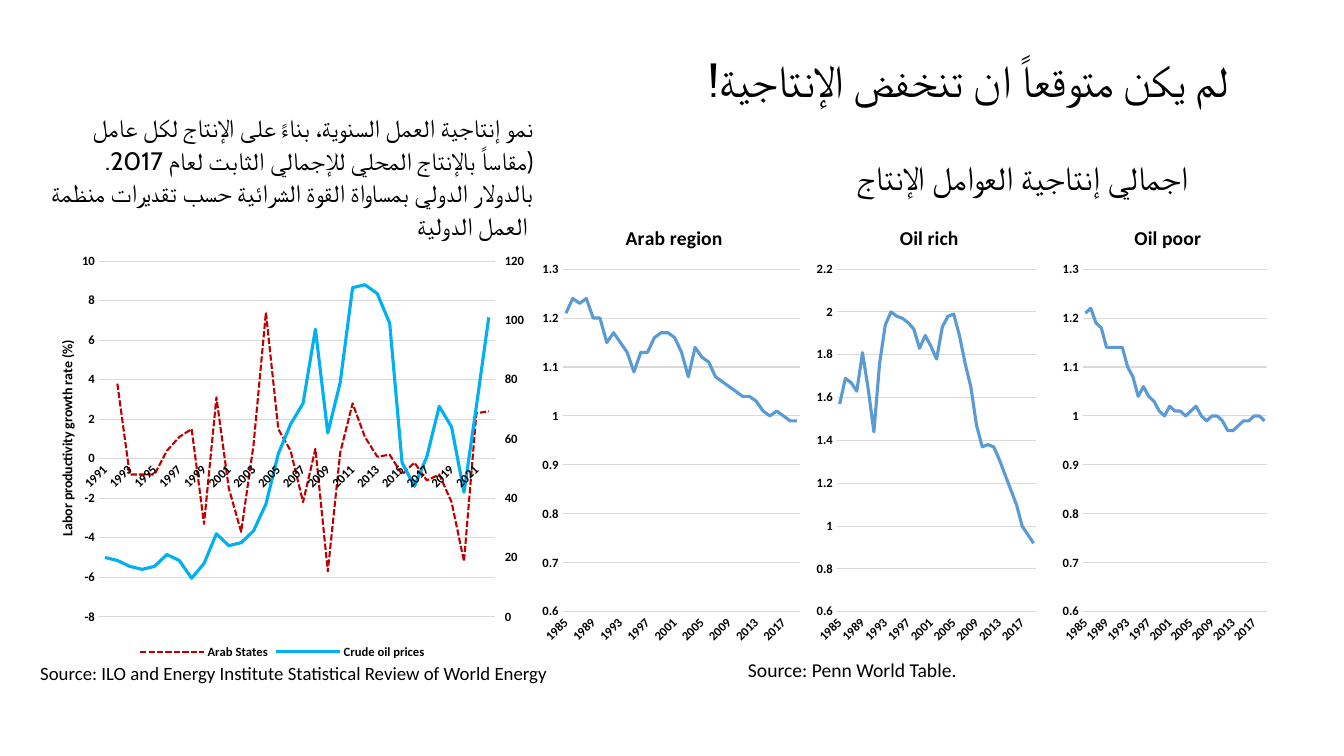
"""Build the slide on falling productivity in the Arab region."""
import copy

import pptx
import pptx.chart.data
import pptx.dml.color
import pptx.enum.chart
import pptx.enum.dml
import pptx.enum.text
import pptx.oxml
import pptx.oxml.ns
import pptx.util

Inches, Pt, qn = pptx.util.Inches, pptx.util.Pt, pptx.oxml.ns.qn
RGB = pptx.dml.color.RGBColor.from_string
ALIGN, ANCHOR = pptx.enum.text.PP_ALIGN, pptx.enum.text.MSO_ANCHOR
COLORS = {"text": "000000", "grid": "D9D9D9", "states": "C00000", "oil": "00B0F0", "tfp": "5B9BD5"}

prs = pptx.Presentation()
prs.slide_width, prs.slide_height = Inches(13.33), Inches(7.5)
s = prs.slides.add_slide(prs.slide_layouts[6])


def set_layout(parent, index, **fractions):
    """Place a chart part by fractions of the chart area."""
    for old in parent.findall(qn("c:layout")):
        parent.remove(old)
    layout = pptx.oxml.parse_xml(f'<c:layout {pptx.oxml.ns.nsdecls("c")}><c:manualLayout/></c:layout>')
    manual = layout[0]
    items = [("xMode", "edge"), ("yMode", "edge")] + [(k, f"{v:.4f}") for k, v in fractions.items()]
    if "w" in fractions:
        items.insert(0, ("layoutTarget", "inner"))
    for tag, val in items:
        manual.makeelement(qn("c:" + tag))
        pptx.oxml.ns.qn("c:" + tag)
        child = copy.deepcopy(manual)
        child.tag = qn("c:" + tag)
        for sub in list(child):
            child.remove(sub)
        child.set("val", val)
        manual.append(child)
    parent.insert(index, layout)


def add_line_chart(box, cats, series, scale, label_step, plot):
    """Add a line chart with the shared axis style; plot is in inches."""
    data = pptx.chart.data.CategoryChartData()
    data.categories = cats
    for name, vals, color, width in series:
        data.add_series(name, vals)
    kind = pptx.enum.chart.XL_CHART_TYPE.LINE
    chart = s.shapes.add_chart(kind, *map(Inches, box), data).chart
    chart.has_title = chart.has_legend = False
    chart.font.name, chart.font.size, chart.font.bold = "Calibri", Pt(10), True
    chart.font.color.rgb = RGB(COLORS["text"])
    chart.plots[0].vary_by_categories = False
    for ser, (name, vals, color, width) in zip(chart.plots[0].series, series):
        ser.smooth = False
        ser.format.line.color.rgb = RGB(COLORS[color])
        ser.format.line.width = Pt(width)

    cat_ax, val_ax = chart.category_axis, chart.value_axis
    for ax in (cat_ax, val_ax):
        ax.major_tick_mark = ax.minor_tick_mark = pptx.enum.chart.XL_TICK_MARK.NONE
        font = ax.tick_labels.font
        font.name, font.size, font.bold = "Calibri", Pt(9), True
        font.color.rgb = RGB(COLORS["text"])
    val_ax.minimum_scale, val_ax.maximum_scale, val_ax.major_unit = scale
    val_ax.has_major_gridlines = True
    val_ax.format.line.fill.background()
    val_ax.tick_labels.number_format = "General"
    val_ax.tick_labels.number_format_is_linked = False
    for line in (cat_ax.format.line, val_ax.major_gridlines.format.line):
        line.color.rgb = RGB(COLORS["grid"])
        line.width = Pt(0.75)

    area = chart._chartSpace.find(".//" + qn("c:plotArea"))
    cat_el, val_el = area.find(qn("c:catAx")), area.find(qn("c:valAx"))
    cat_el.find(qn("c:txPr")).find(qn("a:bodyPr")).set("rot", "-2700000")
    skip = pptx.oxml.parse_xml(
        f'<c:tickLblSkip {pptx.oxml.ns.nsdecls("c")} val="{label_step}"/>')
    cat_el.find(qn("c:noMultiLvlLbl")).addprevious(skip)
    if val_el.find(qn("c:crossBetween")) is None:
        between = pptx.oxml.parse_xml(f'<c:crossBetween {pptx.oxml.ns.nsdecls("c")} val="between"/>')
        val_el.find(qn("c:crosses")).addnext(between)
    x, y, w, h = plot
    set_layout(area, 0, x=x / box[2], y=y / box[3], w=w / box[2], h=h / box[3])
    return chart


texts = [
    ((0.12, 0.39, 12.29, 0.79), "لم يكن متوقعاً ان تنخفض الإنتاجية!\u00a0".replace("\u00a0", " "),
     32, "Cabin", ALIGN.RIGHT, ANCHOR.MIDDLE, 0),
    ((0.39, 1.47, 5, 0.54),
     "نمو إنتاجية العمل السنوية، بناءً على الإنتاج لكل عامل (مقاساً بالإنتاج المحلي للإجمالي الثابت "
     "لعام 2017. بالدولار الدولي بمساواة القوة الشرائية حسب تقديرات منظمة العمل الدولية ",
     18, "Cabin", ALIGN.RIGHT, ANCHOR.MIDDLE, 6.7),
    ((0.3, 6.52, 5.88, 0.33), "Source: ILO and Energy Institute Statistical Review of World Energy",
     13.4, "Calibri", ALIGN.LEFT, ANCHOR.TOP, 6),
    ((7.32, 6.48, 4, 0.34), "Source: Penn World Table.", 14, "Calibri", ALIGN.LEFT, ANCHOR.TOP, 6),
    ((6.48, 1.51, 5.39, 0.5), "اجمالي إنتاجية العوامل الإنتاج", 24, "Calibri", ALIGN.RIGHT, ANCHOR.TOP, 0),
]
for box, text, size, face, align, anchor, after in texts:
    tf = s.shapes.add_textbox(*map(Inches, box)).text_frame
    tf.word_wrap, tf.vertical_anchor = True, anchor
    p = tf.paragraphs[0]
    p.text, p.alignment, p.space_after = text, align, Pt(after)
    if size == 18:
        p.line_spacing = 1.07
    if size == 32:
        for key, val in (("rtl", "1"), ("marL", str(Inches(0.5))), ("indent", str(Inches(-0.38)))):
            p._p.get_or_add_pPr().set(key, val)
    r = p.runs[0]
    r.font.name, r.font.size = face, Pt(size)
    r.font.color.rgb = RGB(COLORS["text"])
    r._r.rPr.append(pptx.oxml.parse_xml(f'<a:cs {pptx.oxml.ns.nsdecls("a")} typeface="{face}"/>'))

growth = [None, 3.8, -0.8, -0.8, -0.8, 0.4, 1.1, 1.5, -3.3, 3.1, -1.5, -3.7, 0.7, 7.4, 1.5, 0.4,
          -2.2, 0.5, -5.7, 0.3, 2.8, 1.1, 0.1, 0.2, -0.8, -0.2, -1.1, -0.8, -2.2, -5.2, 2.3, 2.4]
prices = [20, 19, 17, 16, 17, 21, 19, 13, 18, 28, 24, 25, 29, 38, 55, 65,
          72, 97, 62, 79, 111, 112, 109, 99, 52, 44, 54, 71, 64, 42, 71, 101]
chart = add_line_chart(
    (0.3, 2.44, 5, 4.14), [str(year) for year in range(1991, 2023)],
    [("Arab States", growth, "states", 1.5), ("Crude oil prices", prices, "oil", 2.25)],
    (-8, 10, 2), 2, (0.68, 0.15, 3.93, 3.53))
chart.plots[0].series[0].format.line.dash_style = pptx.enum.dml.MSO_LINE.SQUARE_DOT
chart.has_legend = True
chart.legend.position = pptx.enum.chart.XL_LEGEND_POSITION.BOTTOM
chart.legend.include_in_layout = False
font = chart.legend.font
font.name, font.size, font.bold = "Calibri", Pt(9), True
font.color.rgb = RGB(COLORS["text"])

area = chart._chartSpace.find(".//" + qn("c:plotArea"))
lines, cat_el, val_el = (area.find(qn("c:" + tag)) for tag in ("lineChart", "catAx", "valAx"))
right_lines, right_cat, right_val = map(copy.deepcopy, (lines, cat_el, val_el))
lines.remove(lines.findall(qn("c:ser"))[1])
right_lines.remove(right_lines.find(qn("c:ser")))
lines.addnext(right_lines)
val_el.addnext(right_val)
right_val.addnext(right_cat)
for el, ids in ((right_lines, ("50010", "50020")), (right_cat, ("50010",)), (right_val, ("50020",))):
    for ax_id, new_id in zip(el.findall(qn("c:axId")), ids):
        ax_id.set("val", new_id)
right_cat.find(qn("c:crossAx")).set("val", "50020")
right_cat.find(qn("c:delete")).set("val", "1")
right_val.remove(right_val.find(qn("c:majorGridlines")))
for tag, val in (("crossAx", "50010"), ("axPos", "r"), ("majorTickMark", "out"),
                 ("crosses", "max"), ("majorUnit", "20")):
    right_val.find(qn("c:" + tag)).set("val", val)
for tag, val in (("min", "0"), ("max", "120")):
    right_val.find(qn("c:scaling")).find(qn("c:" + tag)).set("val", val)

title = chart.value_axis.axis_title
title.text_frame.text = "Labor productivity growth rate (%)"
font = title.text_frame.paragraphs[0].runs[0].font
font.name, font.size, font.bold = "Calibri", Pt(10), True
font.color.rgb = RGB(COLORS["text"])
body = title._element.find(".//" + qn("a:bodyPr"))
body.set("rot", "-5400000")
body.set("vert", "horz")
set_layout(title._element, 1, x=0.05, y=0.22)

regions = [
    ("Arab region", 5.32, 2.67, 0.97, (0.6, 1.3, 0.1),
     [1.21, 1.24, 1.23, 1.24, 1.2, 1.2, 1.15, 1.17, 1.15, 1.13, 1.09, 1.13, 1.13, 1.16, 1.17, 1.17, 1.16, 1.13,
      1.08, 1.14, 1.12, 1.11, 1.08, 1.07, 1.06, 1.05, 1.04, 1.04, 1.03, 1.01, 1, 1.01, 1, 0.99, 0.99]),
    ("Oil rich", 8.04, 2.29, 0.59, (0.6, 2.2, 0.2),
     [1.57, 1.69, 1.67, 1.63, 1.81, 1.64, 1.44, 1.76, 1.94, 2, 1.98, 1.97, 1.95, 1.92, 1.83, 1.89, 1.84, 1.78,
      1.93, 1.98, 1.99, 1.89, 1.76, 1.65, 1.47, 1.37, 1.38, 1.37, 1.31, 1.24, 1.17, 1.1, 1, 0.96, 0.92]),
    ("Oil poor", 10.48, 2.14, 0.67, (0.6, 1.3, 0.1),
     [1.21, 1.22, 1.19, 1.18, 1.14, 1.14, 1.14, 1.14, 1.1, 1.08, 1.04, 1.06, 1.04, 1.03, 1.01, 1, 1.02, 1.01,
      1.01, 1, 1.01, 1.02, 1, 0.99, 1, 1, 0.99, 0.97, 0.97, 0.98, 0.99, 0.99, 1, 1, 0.99]),
]
for name, left, width, title_width, scale, vals in regions:
    chart = add_line_chart(
        (left, 2.01, width, 4.47), [str(year) for year in range(1985, 2020)],
        [("Series 1", vals, "tfp", 2.25)], scale, 4, (0.26, 0.66, width - 0.31, 3.4))
    title = chart.chart_title
    title.text_frame.text = name
    font = title.text_frame.paragraphs[0].runs[0].font
    font.name, font.size, font.bold = "Calibri", Pt(14), True
    font.color.rgb = RGB(COLORS["text"])
    set_layout(title._element, 1, x=0.5 - title_width / 2 / width, y=0.04)

prs.save("out.pptx")
